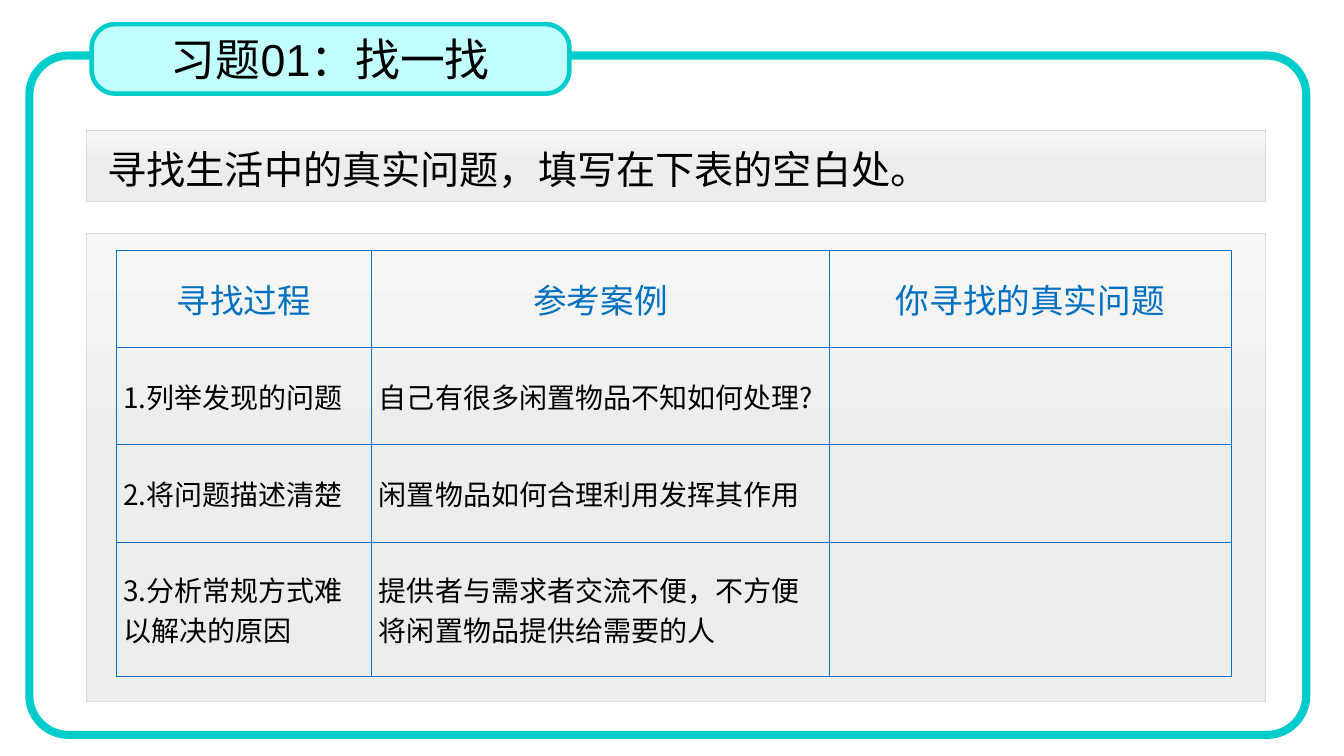
from copy import deepcopy

from lxml import etree
from pptx import Presentation
from pptx.dml.color import RGBColor
from pptx.enum.shapes import MSO_SHAPE
from pptx.enum.text import MSO_ANCHOR, PP_ALIGN
from pptx.oxml.ns import qn
from pptx.util import Cm, Pt

RECT, ROUND = MSO_SHAPE.RECTANGLE, MSO_SHAPE.ROUNDED_RECTANGLE
MIDDLE = MSO_ANCHOR.MIDDLE
LEFT, CENTER = PP_ALIGN.LEFT, PP_ALIGN.CENTER

COLORS = {"ink": "000000", "blue": "0070C0", "teal": "00CCCC", "pale": "C2FFFF",
          "edge": "DBDBDB", "top": "F6F6F6", "mid": "EDEDED", "low": "EBEBEB"}
SANS = "Noto Sans CJK SC"
CELL = {"margin_left": Cm(0.18), "margin_right": Cm(0.18), "margin_top": 0,
        "margin_bottom": 0, "vertical_anchor": MIDDLE}
PLAIN = {"first_row": False, "horz_banding": False}

COLS = [6.45, 11.53, 10.13]
ROWS = [2.46, 2.44, 2.46, 3.38]
HEAD = ["寻找过程", "参考案例", "你寻找的真实问题"]
BODY = [
    ["1.列举发现的问题", "自己有很多闲置物品不知如何处理?", ""],
    ["2.将问题描述清楚", "闲置物品如何合理利用发挥其作用", ""],
    ["3.分析常规方式难以解决的原因",
     "提供者与需求者交流不便，不方便将闲置物品提供给需要的人", ""],
]


def rgb(name):
    return RGBColor.from_string(COLORS[name])


def apply(item, values):
    for key, value in values.items():
        setattr(item, key, value)


def write(frame, text, size, color="ink", align=LEFT, font=SANS):
    para = frame.paragraphs[0]
    para.alignment = align
    run = para.add_run()
    run.text = text
    apply(run.font, {"size": Pt(size), "name": font})
    run.font.color.rgb = rgb(color)
    east = etree.SubElement(run.font._element, qn("a:ea"))
    east.set("typeface", SANS)
    return para


def add_box(slide, kind, box, edge, width):
    shape = slide.shapes.add_shape(kind, *map(Cm, box))
    shape.shadow.inherit = False
    shape.line.color.rgb = rgb(edge)
    shape.line.width = Pt(width)
    return shape


# Grey panel shaded from top to bottom
def add_panel(slide, box):
    fill = add_box(slide, RECT, box, "edge", 0.5).fill
    fill.gradient()
    fill.gradient_angle = 270
    first = fill.gradient_stops[0]._gs
    first.addnext(deepcopy(first))
    for stop, name, place in zip(fill.gradient_stops, ("top", "mid", "low"), (0, 0.5, 1)):
        stop.color.rgb = rgb(name)
        stop.position = place


# Teal frame with the title tag on its upper edge
def add_frame(slide, box):
    left, top, _, _ = box
    frame = add_box(slide, ROUND, box, "teal", 5.75)
    frame.adjustments[0] = 0.058
    frame.fill.background()
    tag = add_box(slide, ROUND, (left + 1.57, top - 0.79, 12.04, 1.75), "teal", 3.25)
    tag.adjustments[0] = 0.341
    tag.fill.solid()
    tag.fill.fore_color.rgb = rgb("pale")
    tag.text_frame.vertical_anchor = MIDDLE
    write(tag.text_frame, "习题01：找一找", 32, align=CENTER, font="Arial")


# Task line over the upper panel
def add_task(slide, box):
    left, top, width, _ = box
    area = (left + 0.28, top - 0.33, width - 0.28, 2.06)
    frame = slide.shapes.add_textbox(*map(Cm, area)).text_frame
    frame.word_wrap = True
    para = write(frame, "寻找生活中的真实问题，填写在下表的空白处。", 28)
    para.line_spacing = 1.5


def set_edges(cell):
    props = cell._tc.get_or_add_tcPr()
    for side in ("a:lnL", "a:lnR", "a:lnT", "a:lnB"):
        line = etree.SubElement(props, qn(side), w=str(Pt(0.5)))
        fill = etree.SubElement(line, qn("a:solidFill"))
        etree.SubElement(fill, qn("a:srgbClr"), val=COLORS["blue"])


# Exercise table inside the lower panel
def add_grid(slide, box):
    left, top, _, _ = box
    area = (left + 0.74, top + 0.41, sum(COLS), sum(ROWS))
    table = slide.shapes.add_table(len(ROWS), len(COLS), *map(Cm, area)).table
    apply(table, PLAIN)
    for col, width in zip(table.columns, COLS):
        col.width = Cm(width)
    for r, (row, height, texts) in enumerate(zip(table.rows, ROWS, [HEAD] + BODY)):
        row.height = Cm(height)
        style = (20, "ink", LEFT) if r else (24, "blue", CENTER)
        for cell, text in zip(row.cells, texts):
            apply(cell, CELL)
            set_edges(cell)
            cell.fill.background()
            if text:
                write(cell.text_frame, text, *style)


def main():
    deck = Presentation()
    apply(deck, {"slide_width": Cm(33.87), "slide_height": Cm(19.05)})
    slide = deck.slides.add_slide(deck.slide_layouts[6])
    lower = (2.18, 5.89, 29.72, 11.79)
    upper = (2.18, 3.28, 29.72, 1.8)
    add_panel(slide, lower)
    add_panel(slide, upper)
    add_frame(slide, (0.74, 1.4, 32.18, 17.12))
    add_task(slide, upper)
    add_grid(slide, lower)
    deck.save("out.pptx")


if __name__ == "__main__":
    main()
